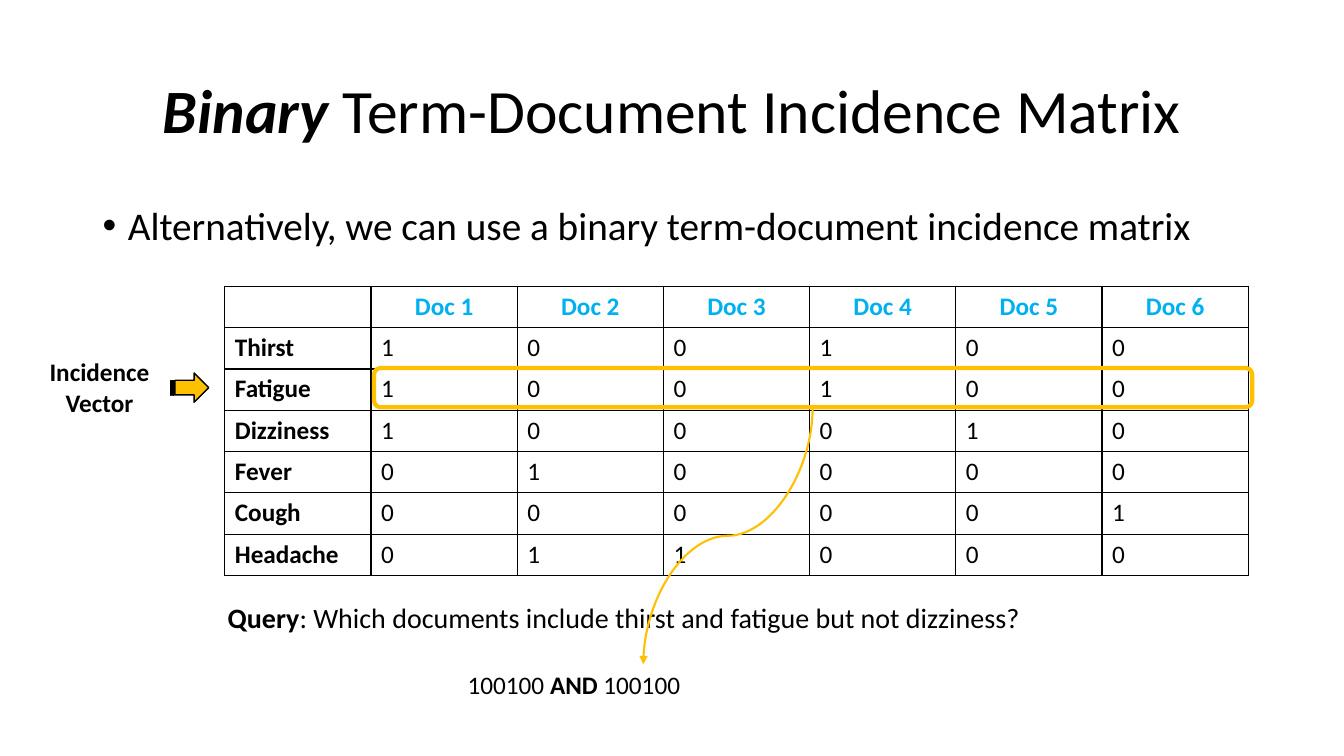
from lxml.etree import SubElement
from pptx import Presentation
from pptx.dml.color import RGBColor
from pptx.enum.shapes import MSO_CONNECTOR, MSO_SHAPE
from pptx.enum.text import MSO_ANCHOR, MSO_AUTO_SIZE, PP_ALIGN
from pptx.oxml.ns import qn
from pptx.util import Inches, Pt

HEX = {"ink": "000000", "gold": "FFC000", "blue": "00B0F0"}
TERMS = {
    "Thirst": "100100",
    "Fatigue": "100100",
    "Dizziness": "100010",
    "Fever": "010000",
    "Cough": "000001",
    "Headache": "011000",
}
COL, ROW = 1.45, 0.41
TABLE_LEFT, TABLE_TOP = 2.23, 2.84


def rgb(name):
    return RGBColor.from_string(HEX[name])


def write(frame, *runs, size=18, color="ink", align=PP_ALIGN.LEFT, space=None, bullet=None):
    """Fill the first paragraph with (text, style) runs; style holds b and i."""
    para = frame.paragraphs[0]
    para.alignment = align
    if space:
        para.line_spacing = space
    if bullet:
        props = para._p.get_or_add_pPr()
        props.set("marL", str(Inches(0.25)))
        props.set("indent", str(-Inches(0.25)))
        SubElement(props, qn("a:buFont"), typeface="Arial")
        SubElement(props, qn("a:buChar"), char=bullet)
    for text, style in runs:
        for num, line in enumerate(text.split("\n")):
            if num:
                para.add_line_break()
            run = para.add_run()
            run.text = line
            font = run.font
            font.name, font.size = "Calibri", Pt(size)
            font.color.rgb = rgb(color)
            font.bold, font.italic = "b" in style, "i" in style


def add_text(slide, box, *runs, wrap=False, **form):
    frame = slide.shapes.add_textbox(*map(Inches, box)).text_frame
    frame.word_wrap = wrap
    frame.auto_size = MSO_AUTO_SIZE.NONE if wrap else MSO_AUTO_SIZE.SHAPE_TO_FIT_TEXT
    write(frame, *runs, **form)


def add_shape(slide, kind, box, line, width, fill=None):
    shape = slide.shapes.add_shape(kind, *map(Inches, box))
    shape.shadow.inherit = False
    shape.line.color.rgb = rgb(line)
    shape.line.width = Pt(width)
    if fill:
        shape.fill.solid()
        shape.fill.fore_color.rgb = rgb(fill)
    else:
        shape.fill.background()


def set_edges(cell):
    props = cell._tc.get_or_add_tcPr()
    for side in ("lnL", "lnR", "lnT", "lnB"):
        edge = SubElement(props, qn(f"a:{side}"), w=str(Pt(1)))
        fill = SubElement(edge, qn("a:solidFill"))
        SubElement(fill, qn("a:srgbClr"), val=HEX["ink"])
    cell.fill.background()


def add_matrix(slide):
    rows = [["", *(f"Doc {num}" for num in range(1, 7))]]
    rows += [[term, *bits] for term, bits in TERMS.items()]
    high, wide = len(rows), len(rows[0])
    box = (TABLE_LEFT, TABLE_TOP, wide * COL, high * ROW)
    table = slide.shapes.add_table(high, wide, *map(Inches, box)).table
    table.first_row = table.horz_banding = False
    for col in table.columns:
        col.width = Inches(COL)
    for r, row in enumerate(rows):
        table.rows[r].height = Inches(ROW)
        for c, text in enumerate(row):
            cell = table.cell(r, c)
            set_edges(cell)
            if text:
                write(cell.text_frame, (text, "" if r and c else "b"),
                      color="ink" if r else "blue",
                      align=PP_ALIGN.LEFT if r else PP_ALIGN.CENTER)


def add_curve(slide, start, end, color):
    """Draw a curved arrow that leaves and arrives vertically."""
    (x1, y1), (x2, y2) = start, end
    midx, midy = (x1 + x2) / 2, (y1 + y2) / 2
    dx, dy = (y2 - y1) / 2, (x1 - x2) / 2
    ends = (midx - dx, midy - dy, midx + dx, midy + dy)
    curve = slide.shapes.add_connector(MSO_CONNECTOR.CURVE, *map(Inches, ends))
    curve.line.color.rgb = rgb(color)
    curve.line.width = Pt(1.5)
    props = curve._element.spPr
    props.find(qn("a:xfrm")).set("rot", str(90 * 60000))
    SubElement(props.find(qn("a:ln")), qn("a:tailEnd"), type="triangle")
    SubElement(props, qn("a:effectLst"))


def add_title(slide):
    title = slide.shapes.title
    title.left, title.top, title.width, title.height = map(Inches, (0.92, 0.4, 11.5, 1.45))
    title.text_frame.vertical_anchor = MSO_ANCHOR.MIDDLE
    write(title.text_frame, ("Binary", "bi"), (" Term-Document Incidence Matrix", ""),
          size=44, align=PP_ALIGN.CENTER, space=0.9)


def main():
    deck = Presentation()
    deck.slide_width, deck.slide_height = Inches(13.33), Inches(7.5)
    slide = deck.slides.add_slide(deck.slide_layouts[5])
    add_title(slide)
    add_matrix(slide)
    add_shape(slide, MSO_SHAPE.ROUNDED_RECTANGLE, (3.71, 3.65, 8.71, 0.39), "gold", 3)
    add_text(slide, (2.16, 5.91, 8.14, 0.44), ("Query", "b"),
             (": Which documents include thirst and fatigue but not dizziness?", ""), size=20)
    add_shape(slide, MSO_SHAPE.STRIPED_RIGHT_ARROW, (1.69, 3.7, 0.38, 0.29), "ink", 1, "gold")
    add_curve(slide, (8.06, 4.04), (6.38, 6.59), "gold")
    add_text(slide, (4.54, 6.59, 2.33, 0.4), ("100100 ", ""), ("AND ", "b"), ("100100", ""))
    add_text(slide, (0.39, 3.49, 1.25, 0.71), ("Incidence \nVector ", "b"),
             align=PP_ALIGN.CENTER)
    add_text(slide, (0.92, 2, 11.72, 5.1),
             ("Alternatively, we can use a binary term-document incidence matrix", ""),
             wrap=True, size=28, space=0.9, bullet="•")
    deck.save("out.pptx")


if __name__ == "__main__":
    main()
